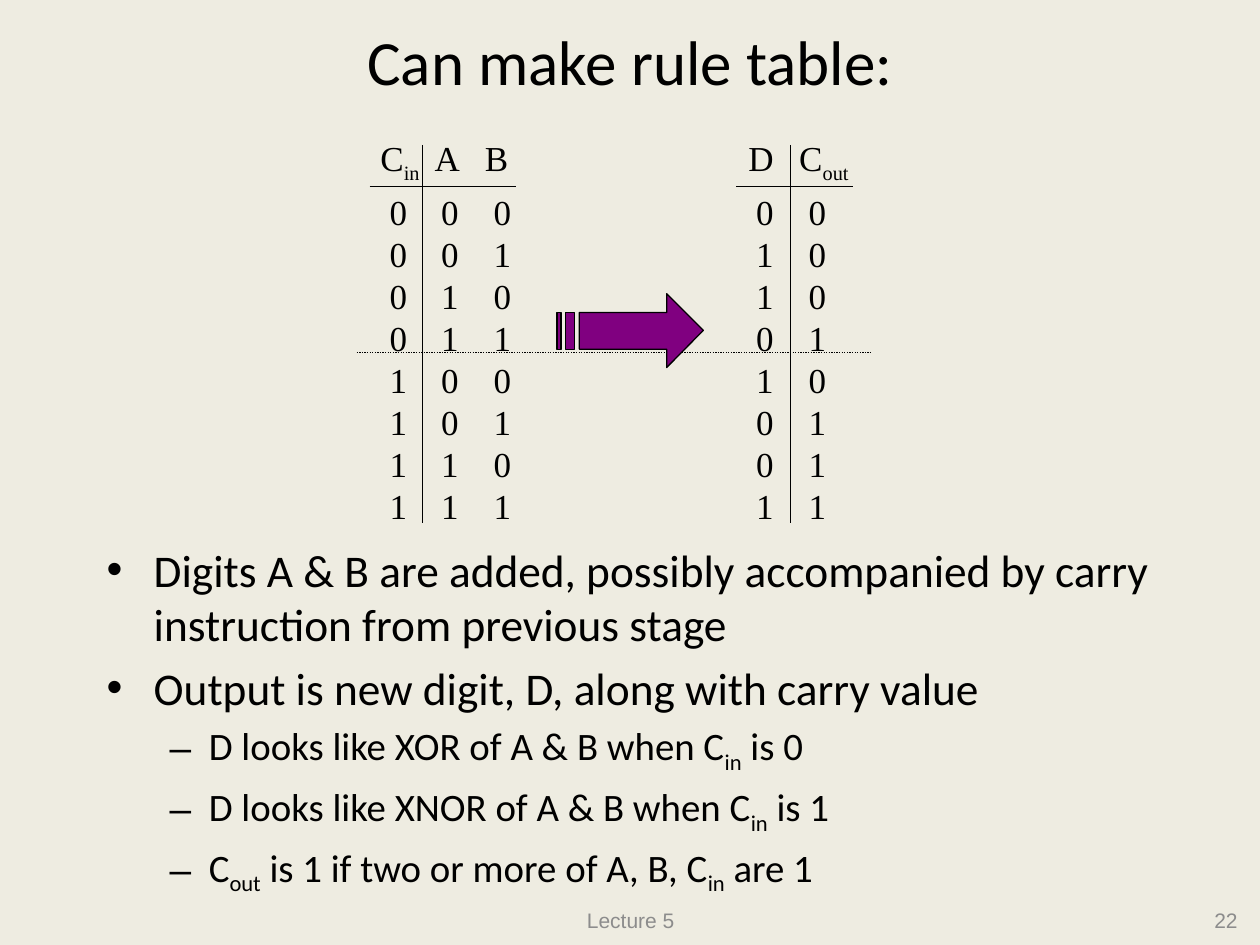
from lxml import etree
from pptx import Presentation
from pptx.dml.color import RGBColor
from pptx.enum import dml, shapes, text
from pptx.oxml import ns
from pptx.util import Cm, Pt

BACKGROUND = RGBColor(0xEE, 0xEC, 0xE1)
BLACK = RGBColor(0x00, 0x00, 0x00)
GREY = RGBColor(0x8C, 0x8C, 0x8C)
PURPLE = RGBColor(0x80, 0x00, 0x80)


def write(paragraph, content, font_name, size, color=BLACK):
    """Fill a paragraph; parts between | marks become subscripts."""
    paragraph.font.name = font_name
    paragraph.font.size = Pt(size)
    paragraph.font.color.rgb = color
    for index, part in enumerate(content.split("|")):
        if part:
            run = paragraph.add_run()
            run.text = part
            if index % 2:
                run._r.get_or_add_rPr().set("baseline", "-25000")


def add_line(container, x1, y1, x2, y2):
    line = container.add_connector(
        shapes.MSO_CONNECTOR.STRAIGHT, Cm(x1), Cm(y1), Cm(x2), Cm(y2))
    line.line.color.rgb = BLACK
    line.line.width = Pt(0.75)
    etree.SubElement(line._element.spPr, ns.qn("a:effectLst"))
    return line


presentation = Presentation()
presentation.slide_width = Cm(25.4)
presentation.slide_height = Cm(19.05)
slide = presentation.slides.add_slide(presentation.slide_layouts[6])
slide.background.fill.solid()
slide.background.fill.fore_color.rgb = BACKGROUND

# Title, footer and slide number
for content, box, alignment, font_name, size, color in [
    ("Lecture 5", (8.69, 18.03, 8.05, 1.02), text.PP_ALIGN.CENTER, "Arial", 12, GREY),
    ("22", (19.28, 18.03, 5.92, 1.02), text.PP_ALIGN.RIGHT, "Arial", 12, GREY),
    ("Can make rule table:", (1.27, 0.2, 22.86, 2.03), text.PP_ALIGN.CENTER,
     "Calibri", 36, BLACK),
]:
    frame = slide.shapes.add_textbox(*map(Cm, box)).text_frame
    frame.word_wrap = True
    frame.vertical_anchor = text.MSO_ANCHOR.MIDDLE
    frame.paragraphs[0].alignment = alignment
    write(frame.paragraphs[0], content, font_name, size, color)

# Divider between carry 0 and carry 1
divider = add_line(slide.shapes, 7.19, 7.11, 17.58, 7.11)
divider.line.dash_style = dml.MSO_LINE.ROUND_DOT

# Rule table: columns sit on centred tab stops
inputs = [f"{number:03b}" for number in range(8)]
outputs = [f"{row.count('1') % 2}{row.count('1') // 2}" for row in inputs]
for left, width, column_x, rule_end, header, rows, header_stops, digit_stops in [
    (7.42, 3.2, 8.51, 10.41, ["C|in|", "A", "B"], inputs,
     (0.38, 1.35, 2.34), (0.36, 1.4, 2.46)),
    (14.81, 2.62, 15.93, 17.2, ["D", "C|out|"], outputs,
     (0.28, 1.55), (0.36, 1.42)),
]:
    group = slide.shapes.add_group_shape().shapes
    frame = group.add_textbox(Cm(left), Cm(2.74), Cm(width), Cm(7.87)).text_frame
    frame.word_wrap = False
    for index, cells in enumerate([header, *rows]):
        paragraph = frame.add_paragraph() if index else frame.paragraphs[0]
        tabs = etree.SubElement(paragraph._p.get_or_add_pPr(), ns.qn("a:tabLst"))
        for stop in digit_stops if index else header_stops:
            etree.SubElement(tabs, ns.qn("a:tab"), pos=str(Cm(stop)), algn="ctr")
        paragraph.line_spacing = Pt(24)
        paragraph.space_before = Pt(3.5 if index == 1 else 0)
        write(paragraph, "".join("\t" + cell for cell in cells), "Times New Roman", 20)
    add_line(group, column_x, 2.92, column_x, 10.54)
    add_line(group, left + 0.03, 3.76, rule_end, 3.76)

# Striped arrow from inputs to outputs
arrow_outlines = [
    [(13.44, 5.92), (13.44, 6.3), (11.68, 6.3), (11.68, 7.04), (13.44, 7.04),
     (13.44, 7.41), (14.18, 6.66)],
    *[[(start, 6.3), (start, 7.04), (end, 7.04), (end, 6.3)]
      for start, end in [(11.4, 11.58), (11.23, 11.31)]],
]
builder = None
for outline in arrow_outlines:
    points = [(Cm(x), Cm(y)) for x, y in outline]
    if builder is None:
        builder = slide.shapes.build_freeform(*points[0])
    else:
        builder.move_to(*points[0])
    builder.add_line_segments(points[1:], close=True)
arrow = builder.convert_to_shape()
arrow.shadow.inherit = False
arrow.fill.solid()
arrow.fill.fore_color.rgb = PURPLE
arrow.line.color.rgb = BLACK
arrow.line.width = Pt(0.75)

# Explanation
frame = slide.shapes.add_textbox(Cm(1.9), Cm(10.8), Cm(21.59), Cm(6.55)).text_frame
frame.word_wrap = True
levels = [("•", 0.95, 0.95, 25.9), ("–", 2.06, 0.79, 22.2)]
for index, (level, content) in enumerate([
    (0, "Digits A & B are added, possibly accompanied by carry instruction "
        "from previous stage"),
    (0, "Output is new digit, D, along with carry value"),
    (1, "D looks like XOR of A & B when C|in| is 0"),
    (1, "D looks like XNOR of A & B when C|in| is 1"),
    (1, "C|out| is 1 if two or more of A, B, C|in| are 1"),
]):
    bullet, margin, hanging, size = levels[level]
    paragraph = frame.add_paragraph() if index else frame.paragraphs[0]
    paragraph.level = level
    properties = paragraph._p.get_or_add_pPr()
    properties.set("marL", str(Cm(margin)))
    properties.set("indent", str(-Cm(hanging)))
    etree.SubElement(properties, ns.qn("a:buFont"), typeface="Arial")
    etree.SubElement(properties, ns.qn("a:buChar"), char=bullet)
    paragraph.space_before = Pt(round(size * 0.2, 1))
    write(paragraph, content, "Calibri", size)

presentation.save("out.pptx")
